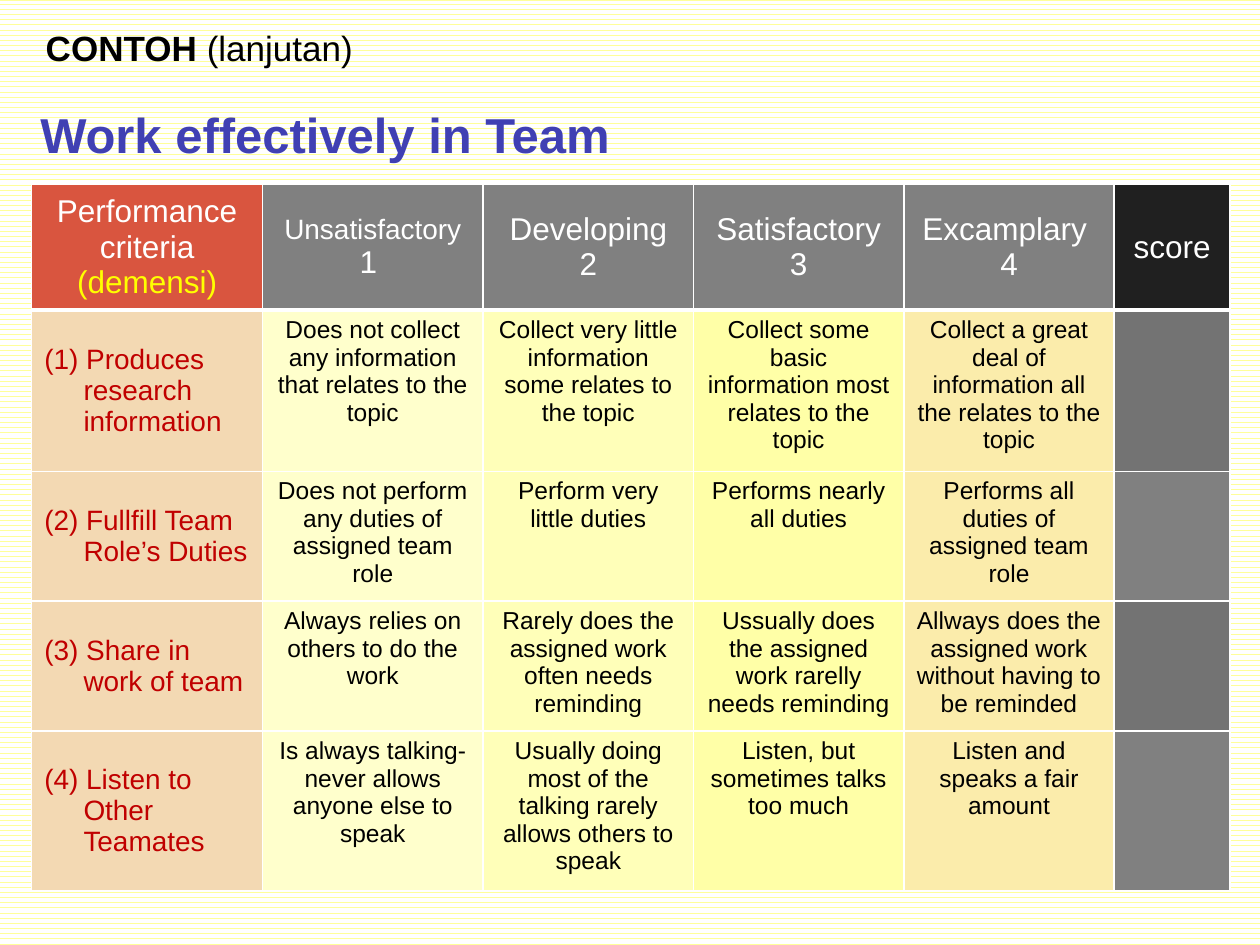
import pptx
import pptx.util
import pptx.dml.color
import pptx.enum.dml
import pptx.enum.text
import lxml.etree
from pptx.oxml.ns import qn

Cm = pptx.util.Cm
Pt = pptx.util.Pt
RGBColor = pptx.dml.color.RGBColor
ALIGN = pptx.enum.text.PP_ALIGN
ANCHOR = pptx.enum.text.MSO_ANCHOR

FONT = "Arial"
WHITE = RGBColor(0xFF, 0xFF, 0xFF)
BLACK = RGBColor(0x00, 0x00, 0x00)
STRIPE = RGBColor(0xFF, 0xFF, 0x99)
TITLE_BLUE = RGBColor(0x40, 0x40, 0xB3)
YELLOW = RGBColor(0xFF, 0xFF, 0x00)
CRITERION_RED = RGBColor(0xC0, 0x00, 0x00)
CRITERION_FILL = RGBColor(0xF3, 0xD9, 0xB3)
CRITERIA_HEAD = RGBColor(0xD9, 0x55, 0x3F)
GREY = RGBColor(0x80, 0x80, 0x80)
DARK_GREY = RGBColor(0x73, 0x73, 0x73)
SCORE_HEAD = RGBColor(0x20, 0x20, 0x20)
LEVEL_FILLS = [
    RGBColor(0xFF, 0xFF, 0xCC),
    RGBColor(0xFF, 0xFF, 0xB9),
    RGBColor(0xFF, 0xFF, 0xA7),
    RGBColor(0xFB, 0xEC, 0xAB),
]
SCORE_FILLS = [DARK_GREY, GREY]

COLUMN_WIDTHS = [4.65, 4.45, 4.24, 4.24, 4.24, 2.34]
ROW_HEIGHTS = [2.54, 3.25, 2.62, 2.62, 3.22]
LEVELS = [("Unsatisfactory", "1 "), ("Developing", "2"),
          ("Satisfactory", "3"), ("Excamplary ", "4")]
CRITERIA = [
    ("(1) Produces research information",
     ["Does not collect any information that relates to the topic",
      "Collect very little information some relates to the topic",
      "Collect some basic information most relates to the topic",
      "Collect a great deal of information all the relates to the topic"]),
    ("(2) Fullfill Team Role’s Duties",
     ["Does not perform any duties of assigned team role",
      "Perform very little duties",
      "Performs nearly all duties",
      "Performs all duties of assigned team role"]),
    ("(3) Share in work of team",
     ["Always relies on others to do the work",
      "Rarely does the assigned work often needs reminding",
      "Ussually does the assigned work rarelly needs reminding",
      "Allways does the assigned work without having to be reminded"]),
    ("(4) Listen to Other Teamates",
     ["Is always talking-never allows anyone else to speak",
      "Usually doing most of the talking rarely allows others to speak",
      "Listen, but sometimes talks too much",
      "Listen and speaks a fair amount"]),
]


def format_run(run, size, color, bold=False):
    run.font.name = FONT
    run.font.size = Pt(size)
    run.font.bold = bold
    run.font.color.rgb = color


def add_heading(slide, left, top, width, height, parts, size, color):
    """One unwrapped line made of (text, bold) parts."""
    heading = slide.shapes.add_textbox(Cm(left), Cm(top), Cm(width), Cm(height))
    heading.text_frame.word_wrap = False
    line = heading.text_frame.paragraphs[0]
    line.alignment = ALIGN.CENTER
    for text, bold in parts:
        run = line.add_run()
        run.text = text
        format_run(run, size, color, bold)


def set_borders(cell, bottom_width):
    properties = cell._tc.get_or_add_tcPr()
    for side, width in (("L", 1), ("R", 1), ("T", 1), ("B", bottom_width)):
        border = lxml.etree.SubElement(properties, qn("a:ln" + side), w=str(Pt(width)))
        fill = lxml.etree.SubElement(border, qn("a:solidFill"))
        lxml.etree.SubElement(fill, qn("a:srgbClr"), val=str(WHITE))


def fill_cell(cell, fill, text="", size=18, color=WHITE, align=ALIGN.CENTER,
              anchor=ANCHOR.MIDDLE, bottom_width=1):
    set_borders(cell, bottom_width)
    cell.fill.solid()
    cell.fill.fore_color.rgb = fill
    cell.vertical_anchor = anchor
    cell.text_frame.text = text
    for paragraph in cell.text_frame.paragraphs:
        paragraph.alignment = align
        for run in paragraph.runs:
            format_run(run, size, color)


def fill_header(table):
    criteria_head = table.cell(0, 0)
    fill_cell(criteria_head, CRITERIA_HEAD, "Performance criteria ", bottom_width=3)
    dimension = criteria_head.text_frame.paragraphs[0].add_run()
    dimension.text = "(demensi)"
    format_run(dimension, 18, YELLOW)
    for column, level in enumerate(LEVELS, start=1):
        fill_cell(table.cell(0, column), GREY, "\n".join(level), bottom_width=3)
    # The longest level name is set smaller to fit its column
    table.cell(0, 1).text_frame.paragraphs[0].runs[0].font.size = Pt(16)
    fill_cell(table.cell(0, 5), SCORE_HEAD, "score", bottom_width=3)


def add_rubric(slide, left, top):
    frame = slide.shapes.add_table(
        len(ROW_HEIGHTS), len(COLUMN_WIDTHS), Cm(left), Cm(top),
        Cm(sum(COLUMN_WIDTHS)), Cm(sum(ROW_HEIGHTS)))
    table = frame.table
    for column, width in zip(table.columns, COLUMN_WIDTHS):
        column.width = Cm(width)
    for row, height in zip(table.rows, ROW_HEIGHTS):
        row.height = Cm(height)

    fill_header(table)
    for row, (criterion, descriptions) in enumerate(CRITERIA, start=1):
        # Criterion with a hanging number
        criterion_cell = table.cell(row, 0)
        fill_cell(criterion_cell, CRITERION_FILL, criterion, 16, CRITERION_RED, ALIGN.LEFT)
        indent = criterion_cell.text_frame.paragraphs[0]._p.get_or_add_pPr()
        indent.set("marL", str(Cm(0.79)))
        indent.set("indent", str(-Cm(0.79)))
        # Description of each level
        for column, (text, fill) in enumerate(zip(descriptions, LEVEL_FILLS), start=1):
            fill_cell(table.cell(row, column), fill, text, 14, BLACK, anchor=ANCHOR.TOP)
        # Empty score
        fill_cell(table.cell(row, 5), SCORE_FILLS[(row - 1) % 2])


def set_striped_background(slide):
    stripes = slide.background.fill
    stripes.patterned()
    stripes.pattern = pptx.enum.dml.MSO_PATTERN.DARK_HORIZONTAL
    stripes.fore_color.rgb = WHITE
    stripes.back_color.rgb = STRIPE


def main():
    presentation = pptx.Presentation()
    presentation.slide_width = Cm(25.4)
    presentation.slide_height = Cm(19.05)
    slide = presentation.slides.add_slide(presentation.slide_layouts[6])
    set_striped_background(slide)
    add_rubric(slide, 0.64, 3.71)
    add_heading(slide, 0.48, 1.98, 12.14, 1.45,
                [("Work effectively in Team", True)], 28, TITLE_BLUE)
    add_heading(slide, 0.64, 0.41, 6.76, 1.12,
                [("CONTOH ", True), ("(lanjutan)", False)], 20, BLACK)
    presentation.save("out.pptx")


if __name__ == "__main__":
    main()
